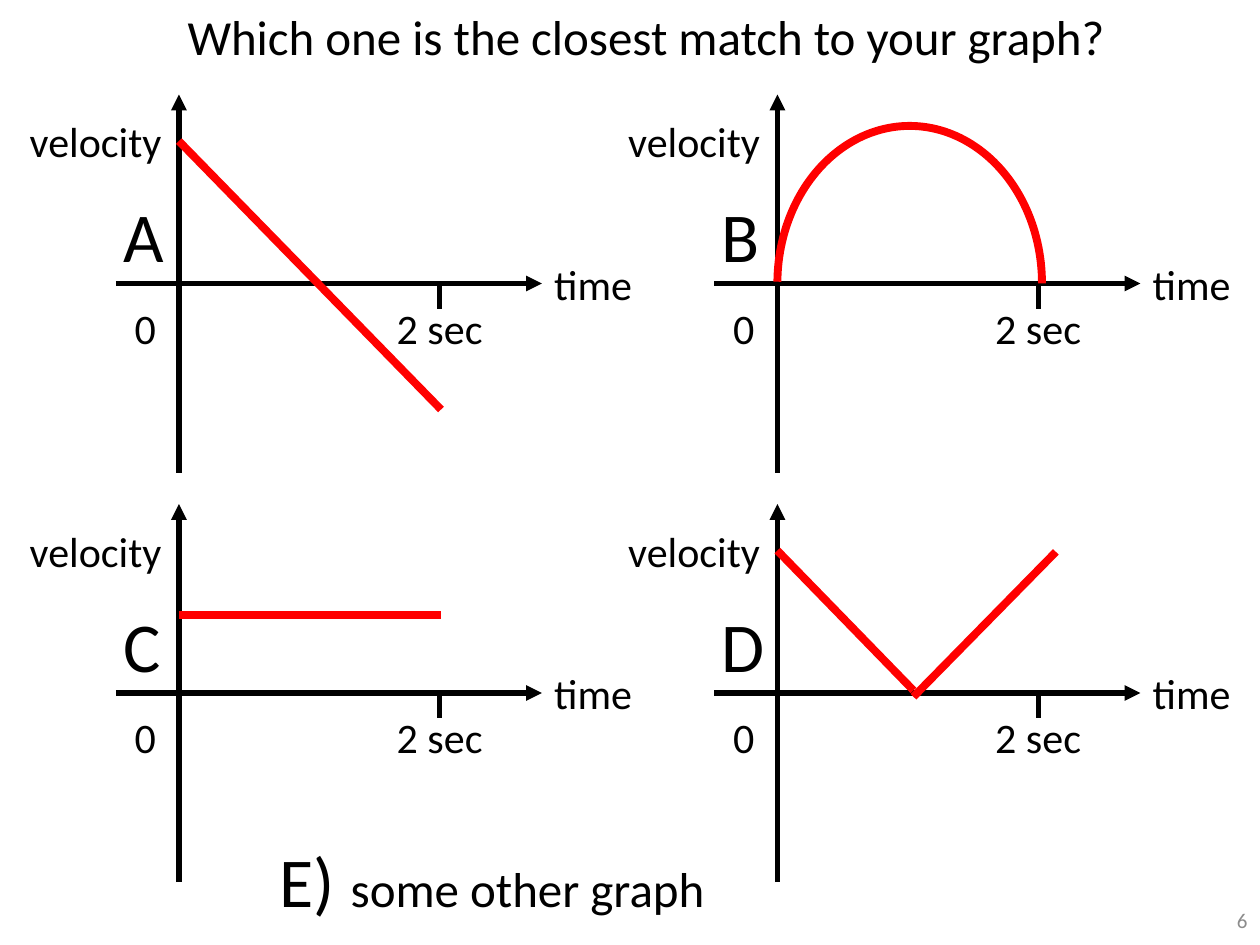
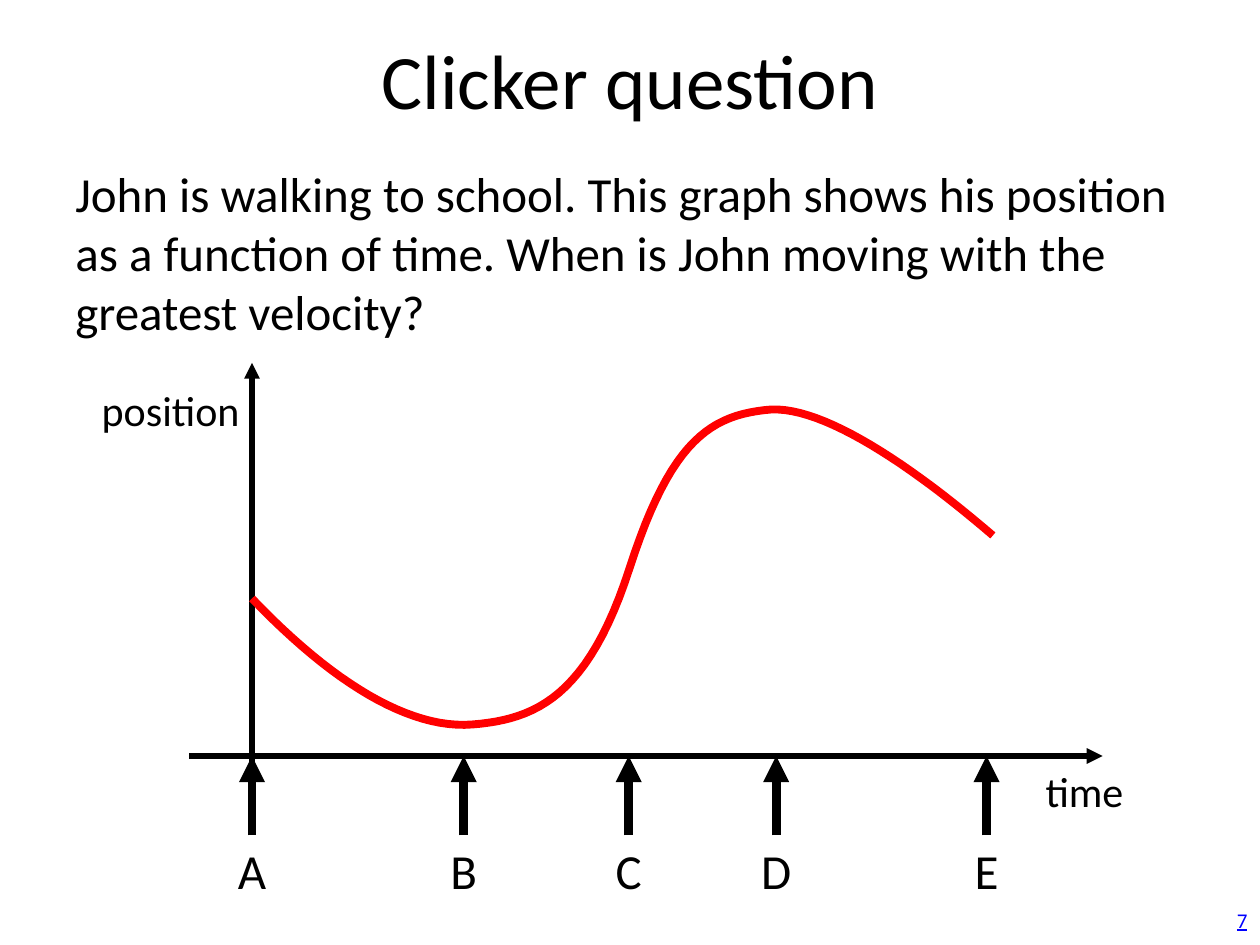
"""Build two physics clicker slides about motion graphs."""
from dataclasses import dataclass
from typing import NamedTuple

from lxml.etree import SubElement
from pptx import Presentation
from pptx.dml.color import RGBColor
from pptx.enum.shapes import MSO_CONNECTOR as CONN, MSO_SHAPE as SHAPE
from pptx.enum.text import MSO_ANCHOR as ANCHOR, MSO_AUTO_SIZE as AUTO, PP_ALIGN as ALIGN
from pptx.oxml.ns import qn
from pptx.slide import Slide
from pptx.util import Inches, Pt


@dataclass(frozen=True)
class Theme:
    font: str = "Calibri"
    ink: RGBColor = RGBColor(0, 0, 0)
    curve: RGBColor = RGBColor(255, 0, 0)
    muted: RGBColor = RGBColor(0x8C, 0x8C, 0x8C)
    link: RGBColor = RGBColor(0, 0, 255)
    title: int = 44
    letter: int = 40
    body: int = 28
    label: int = 24
    number: int = 12
    axis_w: float = 3
    curve_w: float = 4.5
    marker_w: float = 5


T = Theme()


class Point(NamedTuple):
    x: float
    y: float


class Box(NamedTuple):
    x: float
    y: float
    w: float
    h: float


class Run(NamedTuple):
    text: str
    size: int
    color: RGBColor = T.ink
    underline: bool = False


class Panel(NamedTuple):
    letter: str
    letter_w: float
    origin: Point
    segments: tuple[tuple[Point, Point], ...] = ()


class Marker(NamedTuple):
    letter: str
    x: float
    w: float


LEFT, RIGHT, TOP, BOTTOM = 1.42, 6.17, 2.25, 5.5
PANELS = (
    Panel("A", 0.53, Point(LEFT, TOP), ((Point(0, -1.13), Point(2.08, 1)),)),
    Panel("B", 0.53, Point(RIGHT, TOP)),
    Panel("C", 0.5, Point(LEFT, BOTTOM), ((Point(0, -0.62), Point(2.08, -0.62)),)),
    Panel("D", 0.55, Point(RIGHT, BOTTOM), ((Point(0, -1.13), Point(1.08, -0.02)),
                                            (Point(1.08, 0.03), Point(2.21, -1.12)))),
)
MARKERS = (Marker("A", 2, 0.43), Marker("B", 3.68, 0.42), Marker("C", 4.99, 0.41),
           Marker("D", 6.16, 0.44), Marker("E", 7.83, 0.39))
POSITION_CURVE = (
    (Point(2, 4.75), Point(2.64, 5.42), Point(3.25, 5.79), Point(3.75, 5.75)),
    (Point(3.75, 5.75), Point(4.25, 5.71), Point(4.67, 5.53), Point(5, 4.5)),
    (Point(5, 4.5), Point(5.33, 3.48), Point(5.65, 3.29), Point(6.12, 3.25)),
    (Point(6.12, 3.25), Point(6.54, 3.23), Point(7.23, 3.69), Point(7.88, 4.25)),
)


def add_text(s: Slide, box: Box, *runs: Run, align: ALIGN = ALIGN.LEFT,
             anchor: ANCHOR = ANCHOR.TOP, wrap: bool = False) -> None:
    tf = s.shapes.add_textbox(*map(Inches, box)).text_frame
    tf.word_wrap = wrap
    tf.auto_size = AUTO.NONE if wrap else AUTO.SHAPE_TO_FIT_TEXT
    tf.vertical_anchor = anchor
    p = tf.paragraphs[0]
    p.alignment = align
    for run in runs:
        r = p.add_run()
        r.text = run.text
        r.font.name, r.font.size = T.font, Pt(run.size)
        r.font.color.rgb = run.color
        if run.underline:
            r.font.underline = True


def add_line(s: Slide, start: Point, end: Point, width: float = T.axis_w,
             color: RGBColor = T.ink, arrow: bool = False) -> None:
    sp = s.shapes.add_connector(CONN.STRAIGHT, *map(Inches, (*start, *end)))
    sp.line.color.rgb, sp.line.width = color, Pt(width)
    props = sp._element.spPr
    if arrow:
        SubElement(props.find(qn("a:ln")), qn("a:tailEnd"), type="triangle")
    SubElement(props, qn("a:effectLst"))


def style_curve(sp) -> None:
    sp.shadow.inherit = False
    sp.fill.background()
    sp.line.color.rgb, sp.line.width = T.curve, Pt(T.curve_w)


def bezier(a: Point, b: Point, c: Point, d: Point, steps: int = 24) -> list[Point]:
    def at(t: float) -> Point:
        weights = ((1 - t) ** 3, 3 * t * (1 - t) ** 2, 3 * t * t * (1 - t), t ** 3)
        return Point(*(sum(w * v for w, v in zip(weights, axis))
                       for axis in zip(a, b, c, d)))
    return [at(i / steps) for i in range(1, steps + 1)]


def add_position_curve(s: Slide) -> None:
    start = POSITION_CURVE[0][0]
    builder = s.shapes.build_freeform(Inches(start.x), Inches(start.y))
    points = [p for piece in POSITION_CURVE for p in bezier(*piece)]
    builder.add_line_segments([(Inches(p.x), Inches(p.y)) for p in points], close=False)
    style_curve(builder.convert_to_shape())


def add_number(s: Slide, run: Run) -> None:
    add_text(s, Box(7.67, 7.1, 2.33, 0.4), run, align=ALIGN.RIGHT,
             anchor=ANCHOR.MIDDLE, wrap=True)


def add_panel(s: Slide, panel: Panel) -> None:
    x, y = panel.origin
    add_line(s, Point(x - 0.5, y), Point(x + 2.88, y), arrow=True)
    add_line(s, Point(x, y + 1.5), Point(x, y - 1.5), arrow=True)
    add_line(s, Point(x + 2.07, y), Point(x + 2.07, y + 0.2))
    add_text(s, Box(x - 1.3, y - 1.38, 1.26, 0.5), Run("velocity", T.label), align=ALIGN.RIGHT)
    for text, dx, dy, w in (("time", 2.88, -0.25, 0.83), ("2 sec", 1.63, 0.1, 0.89),
                            ("0", -0.45, 0.1, 0.37)):
        add_text(s, Box(x + dx, y + dy, w, 0.5), Run(text, T.label))
    add_text(s, Box(x - 0.54, y - 0.77, panel.letter_w, 0.77), Run(panel.letter, T.letter))
    for a, b in panel.segments:
        add_line(s, Point(x + a.x, y + a.y), Point(x + b.x, y + b.y), T.curve_w, T.curve)


def add_half_ellipse(s: Slide, origin: Point) -> None:
    box = Box(origin.x, origin.y - 1.25, 2.1, 2.5)
    sp = s.shapes.add_shape(SHAPE.ARC, *map(Inches, box))
    sp.adjustments[0], sp.adjustments[1] = 108.44, 0
    style_curve(sp)


def build_match_slide(s: Slide) -> None:
    add_number(s, Run("6", T.number, T.muted))
    for panel in PANELS:
        add_panel(s, panel)
    add_half_ellipse(s, Point(RIGHT, TOP))
    add_text(s, Box(2.12, 6.6, 3.61, 0.77), Run("E) ", T.letter),
             Run("some other graph", T.body))
    add_text(s, Box(1.39, 0, 7.77, 0.57),
             Run("Which one is the closest match to your graph?", T.body))


def build_clicker_slide(s: Slide) -> None:
    add_text(s, Box(0.5, 0, 9, 1.25), Run("Clicker question", T.title),
             align=ALIGN.CENTER, anchor=ANCHOR.MIDDLE, wrap=True)
    add_text(s, Box(0.5, 1.25, 9, 5.5),
             Run("John is walking to school. This graph shows his position as a function "
                 "of time. When is John moving with the greatest velocity?", T.body), wrap=True)
    add_number(s, Run("7", T.number, T.link, underline=True))
    add_line(s, Point(1.5, 6), Point(8.75, 6), arrow=True)
    add_text(s, Box(8.2, 6.03, 0.83, 0.5), Run("time", T.label))
    add_line(s, Point(2, 6.38), Point(2, 2.88), arrow=True)
    add_text(s, Box(0.69, 3, 1.31, 0.5), Run("position", T.label), align=ALIGN.RIGHT)
    add_position_curve(s)
    for m in MARKERS:
        add_text(s, Box(m.x - m.w / 2, 6.62, m.w, 0.57), Run(m.letter, T.body),
                 align=ALIGN.CENTER)
        add_line(s, Point(m.x, 6.63), Point(m.x, 6), T.marker_w, arrow=True)


def main() -> None:
    prs = Presentation()
    prs.slide_width, prs.slide_height = Inches(10), Inches(7.5)
    for build in (build_match_slide, build_clicker_slide):
        build(prs.slides.add_slide(prs.slide_layouts[6]))
    prs.save("out.pptx")


if __name__ == "__main__":
    main()
